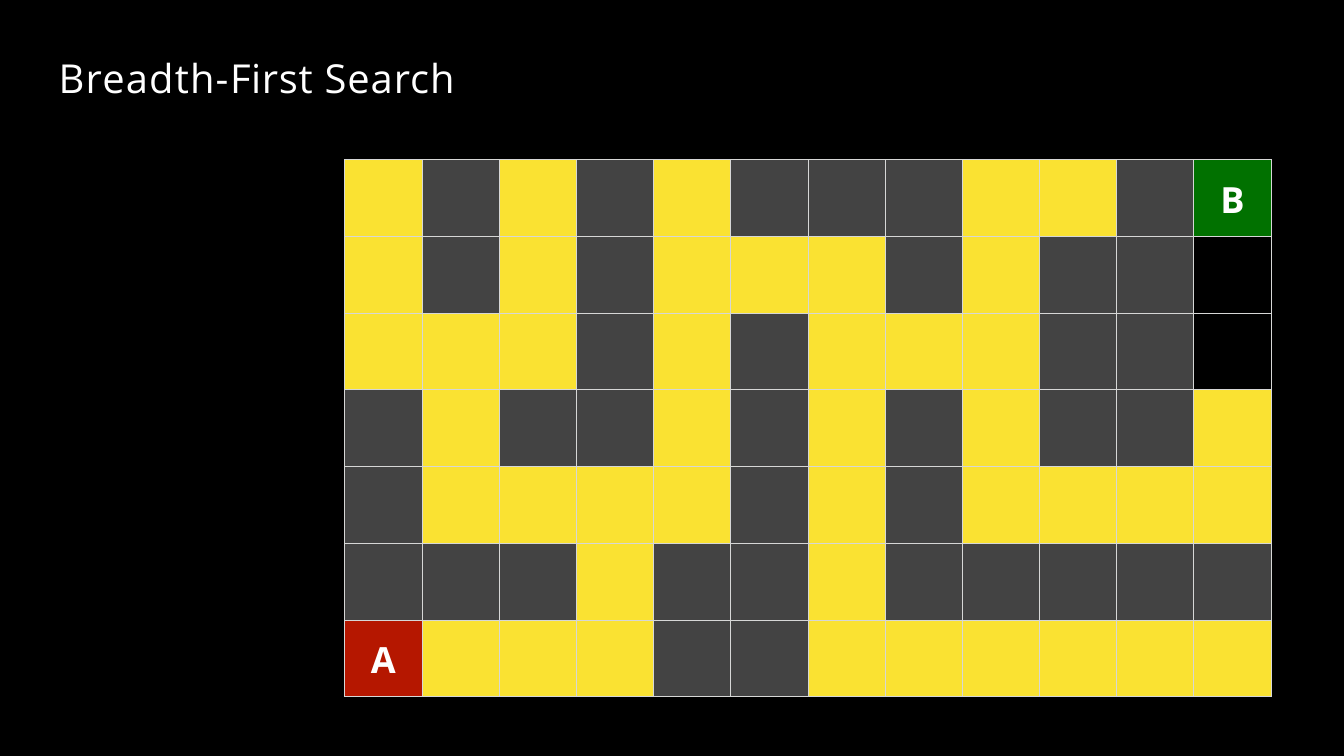
import pptx
import pptx.util
import pptx.dml.color
import pptx.enum.text
import pptx.oxml.ns
from lxml import etree

Inches = pptx.util.Inches
Pt = pptx.util.Pt
RGBColor = pptx.dml.color.RGBColor
PP_ALIGN = pptx.enum.text.PP_ALIGN
MSO_ANCHOR = pptx.enum.text.MSO_ANCHOR

BLACK = RGBColor(0x00, 0x00, 0x00)
WHITE = RGBColor(0xFF, 0xFF, 0xFF)
YELLOW = RGBColor(0xFA, 0xE2, 0x32)
GRAY = RGBColor(0x43, 0x43, 0x43)
GREEN = RGBColor(0x01, 0x71, 0x00)
RED = RGBColor(0xB5, 0x17, 0x00)
GRID_LINE = RGBColor(0xD6, 0xD7, 0xD6)

TITLE = [("Breadth-", 1.4), ("First ", 0.8), ("Search", 1.1)]
MAZE = [
    "o#o#o###oo#B",
    "o#o#ooo#o##.",
    "ooo#o#ooo##.",
    "#o##o#o#o##o",
    "#oooo#o#oooo",
    "###o##o#####",
    "Aooo##oooooo",
]
SQUARE_FILLS = {"o": YELLOW, "#": GRAY, "A": RED, "B": GREEN}
LABEL_SPACING = {"A": 2, "B": 3.5}
MAZE_LEFT, MAZE_TOP, MAZE_WIDTH, MAZE_HEIGHT = 5.64, 2.61, 15.16, 8.79


def add_text(paragraph, text, size, spacing, bold=False, align=PP_ALIGN.LEFT):
    paragraph.alignment = align
    run = paragraph.add_run()
    run.text = text
    run.font.name = "Open Sans"
    run.font.size = Pt(size)
    run.font.bold = bold
    run.font.color.rgb = WHITE
    run.font._element.set("spc", str(round(spacing * 100)))


def outline(cell):
    qn = pptx.oxml.ns.qn
    properties = cell._tc.get_or_add_tcPr()
    for side in ("a:lnL", "a:lnR", "a:lnT", "a:lnB"):
        line = etree.SubElement(properties, qn(side), w=str(Pt(1)))
        fill = etree.SubElement(line, qn("a:solidFill"))
        etree.SubElement(fill, qn("a:srgbClr"), val=str(GRID_LINE))


def add_title(slide):
    title = slide.shapes.title
    title.left, title.top = Inches(0.96), Inches(0.86)
    title.width, title.height = Inches(12.65), Inches(0.81)
    frame = title.text_frame
    frame.margin_left = frame.margin_right = frame.margin_bottom = 0
    frame.margin_top = Inches(0.02)
    frame.vertical_anchor = MSO_ANCHOR.TOP
    frame.word_wrap = True
    frame.auto_size = pptx.enum.text.MSO_AUTO_SIZE.SHAPE_TO_FIT_TEXT
    for text, spacing in TITLE:
        add_text(frame.paragraphs[0], text, size=47, spacing=spacing)


def add_maze(slide):
    maze = slide.shapes.add_table(
        len(MAZE), len(MAZE[0]), Inches(MAZE_LEFT), Inches(MAZE_TOP),
        Inches(MAZE_WIDTH), Inches(MAZE_HEIGHT)).table
    maze.first_row = maze.horz_banding = False
    for column in maze.columns:
        column.width = Inches(MAZE_WIDTH / len(MAZE[0]))
    for row in maze.rows:
        row.height = Inches(MAZE_HEIGHT / len(MAZE))

    for row_index, squares in enumerate(MAZE):
        for column_index, square in enumerate(squares):
            cell = maze.cell(row_index, column_index)
            outline(cell)
            if square in SQUARE_FILLS:
                cell.fill.solid()
                cell.fill.fore_color.rgb = SQUARE_FILLS[square]
            else:
                cell.fill.background()
            if square in LABEL_SPACING:
                cell.margin_left = cell.margin_right = cell.margin_bottom = 0
                cell.margin_top = Inches(0.05)
                cell.vertical_anchor = MSO_ANCHOR.MIDDLE
                add_text(cell.text_frame.paragraphs[0], square, size=42.5,
                         spacing=LABEL_SPACING[square], bold=True,
                         align=PP_ALIGN.CENTER)


def main():
    presentation = pptx.Presentation()
    presentation.slide_width = Inches(21.99)
    presentation.slide_height = Inches(12.37)
    slide = presentation.slides.add_slide(presentation.slide_layouts[5])
    slide.background.fill.solid()
    slide.background.fill.fore_color.rgb = BLACK
    add_title(slide)
    add_maze(slide)
    presentation.save("out.pptx")


if __name__ == "__main__":
    main()
